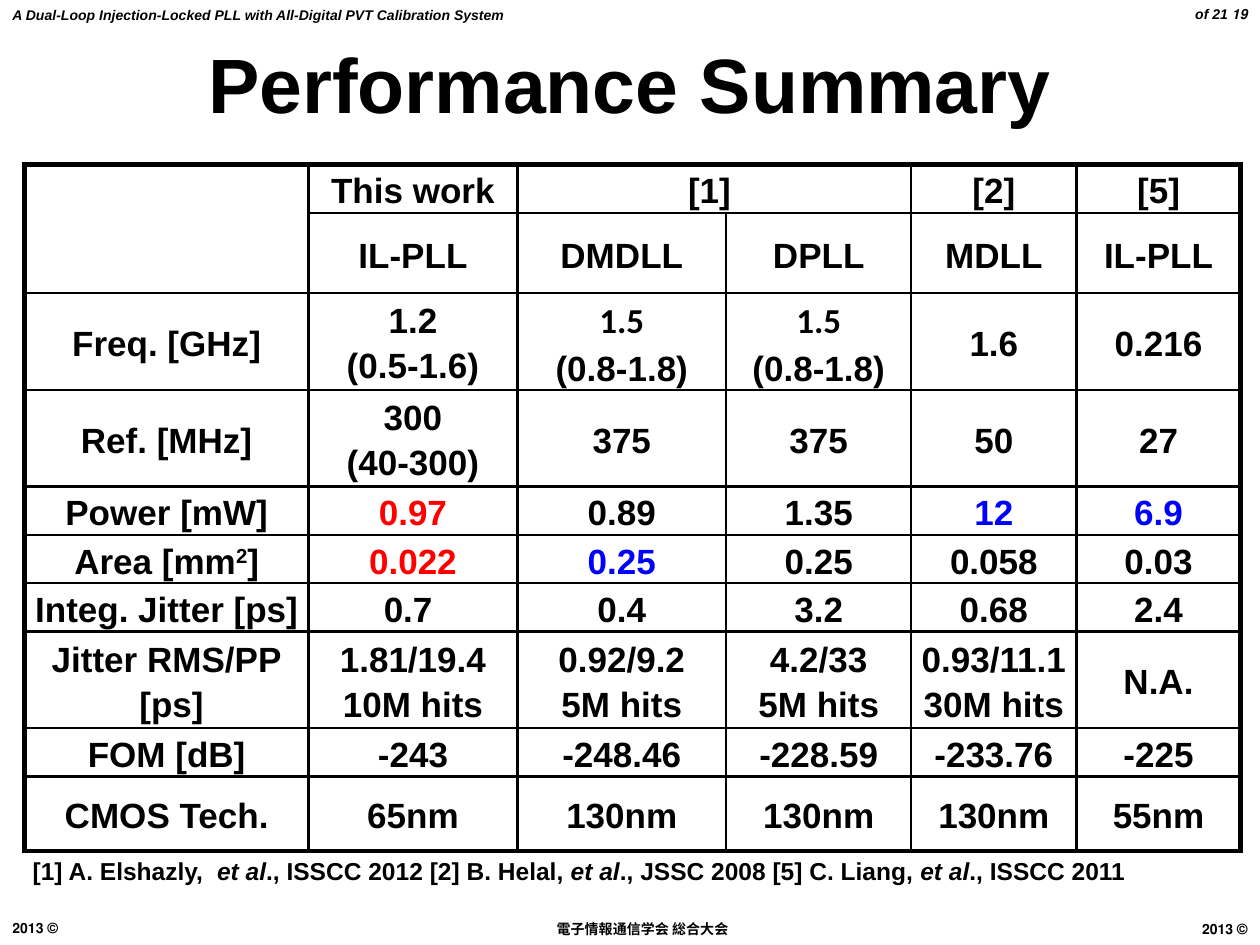
from lxml.etree import SubElement
from pptx import Presentation
from pptx.dml.color import RGBColor
from pptx.enum.text import MSO_ANCHOR, PP_ALIGN
from pptx.oxml.ns import qn
from pptx.util import Cm, Pt

BLACK = RGBColor(0x00, 0x00, 0x00)
WHITE = RGBColor(0xFF, 0xFF, 0xFF)
RED = RGBColor(0xFF, 0x00, 0x00)
BLUE = RGBColor(0x00, 0x00, 0xFF)


def add_run(p, text, size, italic=False, color=BLACK, font="Arial"):
    r = p.add_run()
    r.text = text
    r.font.size = Pt(size)
    r.font.name = font
    r.font.bold = True
    r.font.italic = italic
    r.font.color.rgb = color
    return r


def add_text_box(left, top, width, height, align=PP_ALIGN.LEFT, rtl=False):
    """Add a text box measured in cm and return its frame and first paragraph."""
    tf = s.shapes.add_textbox(Cm(left), Cm(top), Cm(width), Cm(height)).text_frame
    tf.word_wrap = True
    p = tf.paragraphs[0]
    p.alignment = align
    if rtl:
        p.line_spacing = 0.93
        p._p.get_or_add_pPr().set("rtl", "1")
    return tf, p


prs = Presentation()
prs.slide_width, prs.slide_height = Cm(25.4), Cm(19.05)
s = prs.slides.add_slide(prs.slide_layouts[6])

# Header and footer
footers = [
    (0, 18.44, 5, PP_ALIGN.LEFT, "© 2013"),
    (20.4, 18.47, 5, PP_ALIGN.RIGHT, "© 2013 "),
    (4.8, 18.47, 16.31, PP_ALIGN.CENTER, " 電子情報通信学会 総合大会 "),
]
for left, top, width, align, text in footers:
    tf, p = add_text_box(left, top, width, 0.58, align, rtl=True)
    add_run(p, text, 8)

tf, p = add_text_box(0, 0, 25.4, 0.6)
add_run(p, "A Dual-Loop Injection-Locked PLL with All-Digital PVT Calibration System",
        8, italic=True)

tf, p = add_text_box(21.8, 0.03, 3.6, 0.56, PP_ALIGN.RIGHT, rtl=True)
tf.vertical_anchor = MSO_ANCHOR.MIDDLE
add_run(p, "19 of 21", 8, italic=True)

# Title
tf, p = add_text_box(0, 0.6, 25.4, 2.12, PP_ALIGN.CENTER)
tf.vertical_anchor = MSO_ANCHOR.MIDDLE
add_run(p, "Performance Summary", 44)

# Comparison table; text between carets is superscript
rows = [
    ["", "This work", "[1] ", "", "[2]", "[5]"],
    ["", "IL-PLL", "DMDLL", "DPLL", "MDLL", "IL-PLL"],
    ["Freq. [GHz]", "1.2\n(0.5-1.6)", "1.5\n(0.8-1.8)", "1.5\n(0.8-1.8)", "1.6", "0.216"],
    ["Ref. [MHz]", "300\n(40-300)", "375", "375", "50", "27"],
    ["Power [mW]", "0.97", "0.89", "1.35", "12", "6.9"],
    ["Area [mm^2^]", "0.022", "0.25", "0.25", "0.058", "0.03"],
    ["Integ. Jitter [ps]", "0.7 ", "0.4", "3.2", "0.68", "2.4"],
    ["Jitter RMS/PP\n [ps]", "1.81/19.4\n10M hits", "0.92/9.2\n5M hits",
     "4.2/33\n5M hits", "0.93/11.1\n30M hits", "N.A."],
    ["FOM [dB]", "-243", "-248.46", "-228.59", "-233.76", "-225"],
    ["CMOS Tech.", "65nm", "130nm", "130nm", "130nm", "55nm"],
]
col_widths = [5.72, 4.21, 4.21, 3.73, 3.33, 3.31]
row_heights = [0.97, 1.61, 1.95, 1.95, 0.97, 0.97, 0.97, 1.95, 0.97, 1.5]
highlights = {(4, 1): RED, (5, 1): RED, (4, 4): BLUE, (4, 5): BLUE, (5, 2): BLUE}
last_row, last_col = len(rows) - 1, len(col_widths) - 1

table = s.shapes.add_table(len(rows), len(col_widths), Cm(0.5), Cm(3.32),
                           Cm(sum(col_widths)), Cm(sum(row_heights))).table
table.first_row = table.horz_banding = False
for column, width in zip(table.columns, col_widths):
    column.width = Cm(width)
for row, height in zip(table.rows, row_heights):
    row.height = Cm(height)
table.cell(0, 0).merge(table.cell(1, 0))
table.cell(0, 2).merge(table.cell(0, 3))

for i, row in enumerate(rows):
    for j, text in enumerate(row):
        cell = table.cell(i, j)
        cell.vertical_anchor = MSO_ANCHOR.MIDDLE
        cell.margin_left = cell.margin_right = Cm(0.2)
        cell.margin_top = cell.margin_bottom = 0

        tcPr = cell._tc.get_or_add_tcPr()
        outer = {"lnL": j == 0, "lnR": j == last_col, "lnT": i == 0, "lnB": i == last_row}
        for side, is_outer in outer.items():
            ln = SubElement(tcPr, qn(f"a:{side}"), w=str(Pt(3 if is_outer else 1.5)))
            SubElement(SubElement(ln, qn("a:solidFill")), qn("a:srgbClr"), val=str(BLACK))
        cell.fill.solid()
        cell.fill.fore_color.rgb = WHITE

        if not text:
            continue
        tf = cell.text_frame
        for n, line in enumerate(text.split("\n")):
            p = tf.add_paragraph() if n else tf.paragraphs[0]
            p.alignment = PP_ALIGN.CENTER
            p.line_spacing = 1.15
            font = "Calibri" if line == "1.5" else "Arial"
            for k, part in enumerate(line.split("^")):
                r = add_run(p, part, 20, color=highlights.get((i, j), BLACK), font=font)
                if k % 2:
                    r.font._element.set("baseline", "30000")

# References
tf, p = add_text_box(0.41, 17.14, 22.63, 0.86)
tf.word_wrap = False
references = ["[1] A. Elshazly,  ", "., ISSCC 2012 [2] B. Helal, ",
              "., JSSC 2008 [5] C. Liang, ", "., ISSCC 2011"]
for n, text in enumerate(references):
    if n:
        add_run(p, "et al", 14, italic=True)
    add_run(p, text, 14)

prs.save("out.pptx")
